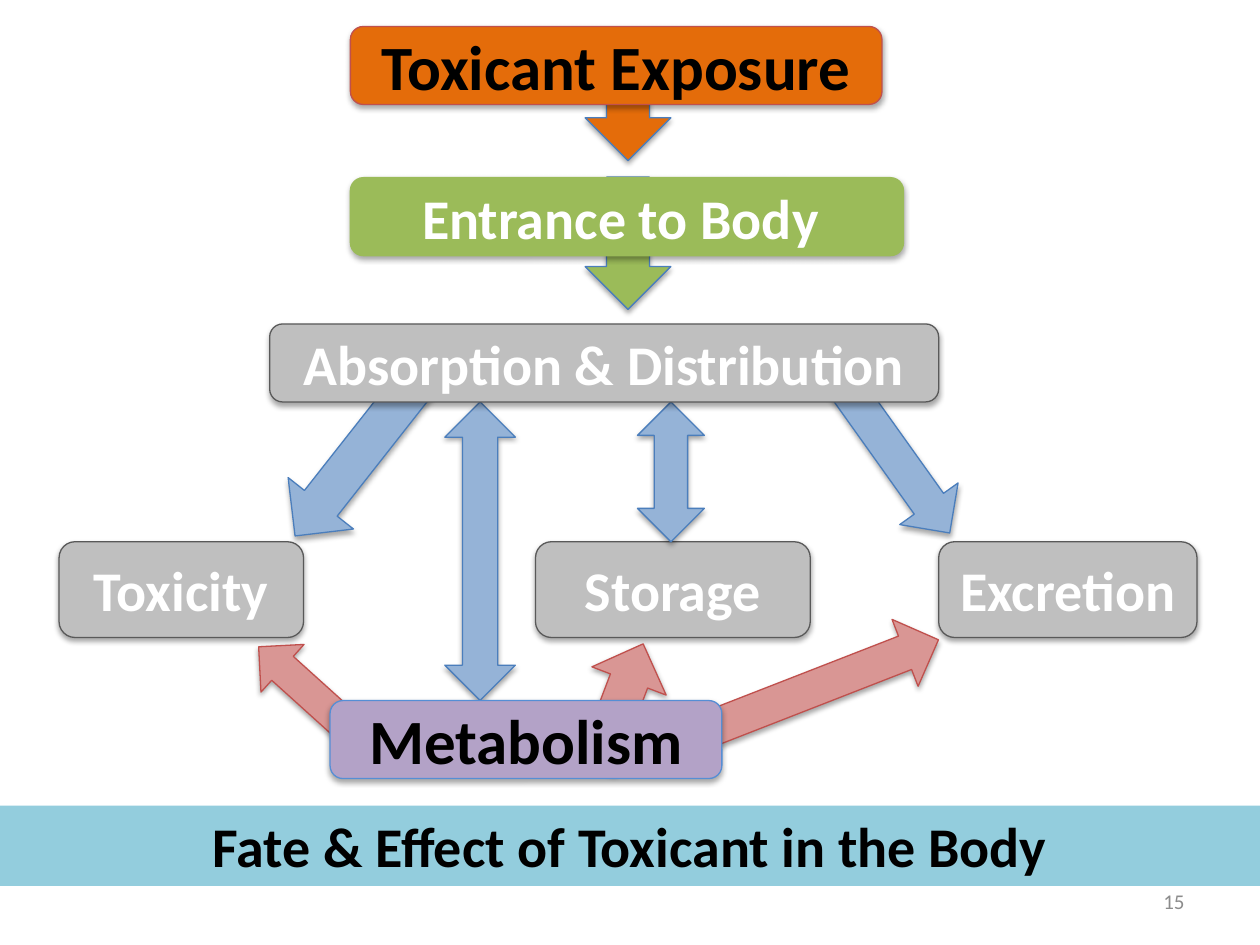
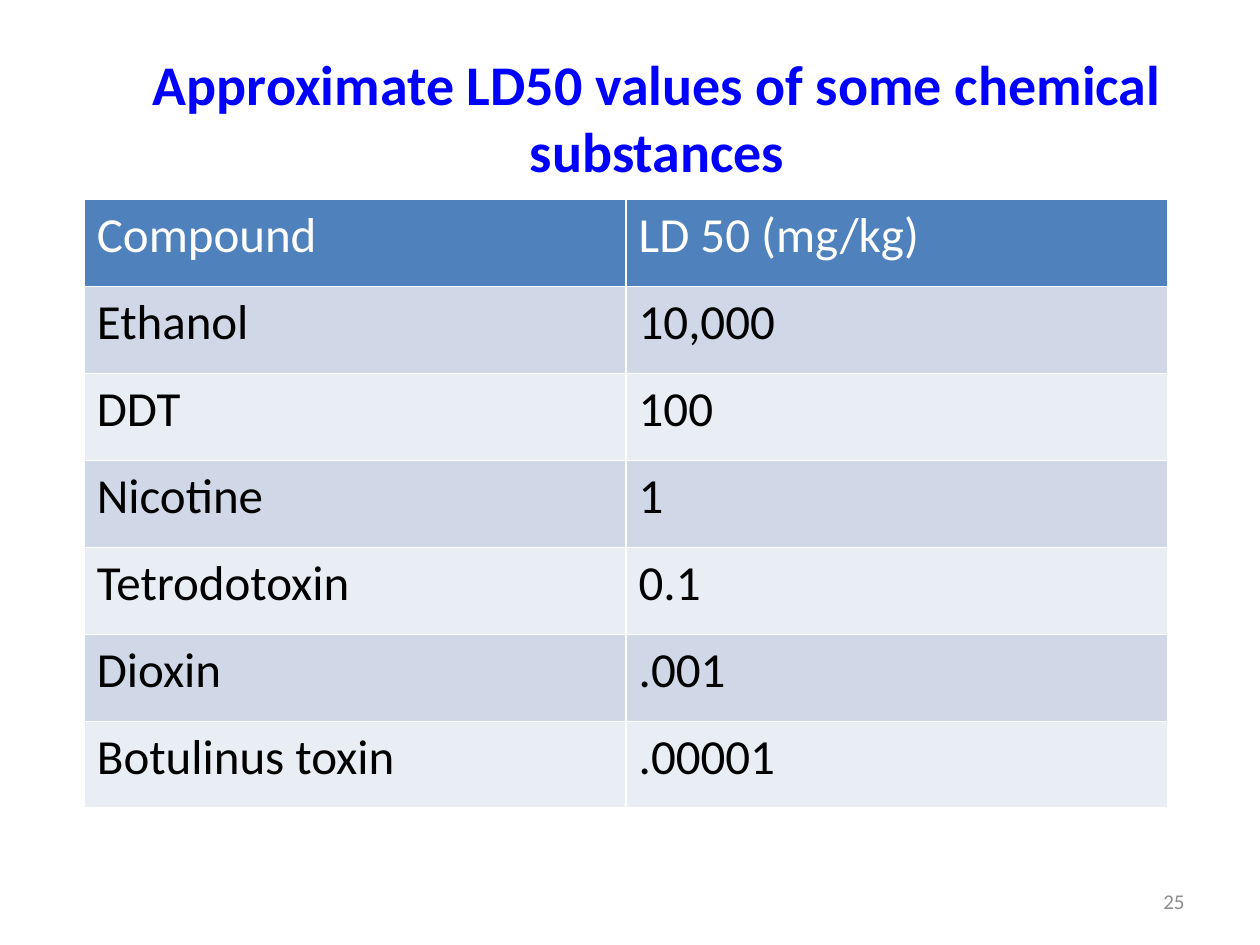
from lxml.etree import SubElement
from pptx import Presentation
from pptx.dml.color import RGBColor
from pptx.enum.shapes import MSO_SHAPE
from pptx.enum.text import MSO_ANCHOR, PP_ALIGN
from pptx.oxml.ns import qn
from pptx.util import Pt

FONT = "Calibri"
BLACK, WHITE, GREY, DARK_GREY = "000000", "FFFFFF", "BFBFBF", "595959"
ORANGE, GREEN, BLUE, BLUE_LINE = "E46C0A", "9BBB59", "95B3D7", "4B7EBC"
PINK, RED, PURPLE, PURPLE_LINE = "D99694", "C0504D", "B3A2C7", "558ED5"
AQUA, TITLE_BLUE, NUMBER_GREY = "93CDDD", "0000FF", "8C8C8C"
HEADER, BANDS = "4F81BD", ("D0D8E8", "E9EDF4")

OUTCOME_TOP, OUTCOME_H, STEP_H = 309.6, 54.7, 44.6
STEP_BOTTOM = 229.7
ARROW_X = 358.85

OUTCOMES = [("Excretion", 536.4, 147.6), ("Storage", 306, 157), ("Toxicity", 33.8, 139.7)]
STEPS = [
    ("Absorption & Distribution", 154.1, 185.1, 382.3, GREY, DARK_GREY, WHITE, 32),
    ("Entrance to Body ", 200.2, 101.5, 316.1, GREEN, GREEN, WHITE, 32),
    ("Toxicant Exposure", 200.2, 15.1, 303.8, ORANGE, RED, BLACK, 36),
]
METABOLISM = ("Metabolism", 188.6, 400.3, 223.9, PURPLE, PURPLE_LINE, BLACK, 36)
DOWN_ARROWS = [(139, 75.6, GREEN), (58.3, 67, ORANGE)]
SPREAD_ARROWS = [(145.4, 234.7, 121.7, 47.5, 128.2), (438.5, 230.4, 131.8, 41, 54.5)]
EXCHANGE_ARROWS = [(364.3, 38.2, 79.9), (254.2, 40.3, 170.6)]
METABOLISM_ARROWS = [
    (137.5, 378, 79.9, 36.7, 222.1),
    (316.8, 380.2, 74.9, 45.4, 290.8),
    (392.4, 372.2, 149, 41, 338.7),
]
BAND_TEXT = "Fate & Effect of Toxicant in the Body"
LD50_TITLE = "Approximate LD50 values of some chemical substances"
LD50_ROWS = [
    ("Compound", "LD 50 (mg/kg)"),
    ("Ethanol", "10,000"),
    ("DDT", "100"),
    ("Nicotine", "1"),
    ("Tetrodotoxin", "0.1"),
    ("Dioxin", ".001"),
    ("Botulinus toxin", ".00001"),
]


def rgb(value):
    return RGBColor.from_string(value)


def write(tf, text, size=32, color=BLACK, bold=False, align=PP_ALIGN.CENTER, anchor=MSO_ANCHOR.MIDDLE):
    tf.word_wrap = True
    tf.vertical_anchor = anchor
    p = tf.paragraphs[0]
    p.alignment = align
    r = p.add_run()
    r.text = text
    r.font.name, r.font.size, r.font.bold = FONT, Pt(size), bold
    r.font.color.rgb = rgb(color)


def place(sp, x, y, w, h):
    sp.left, sp.top, sp.width, sp.height = Pt(x), Pt(y), Pt(w), Pt(h)


def add_shadow(sp):
    effects = sp._element.spPr.find(qn("a:effectLst"))
    shadow = SubElement(effects, qn("a:outerShdw"), blurRad=str(Pt(3.1)), dist=str(Pt(1.8)),
                        dir="5400000", rotWithShape="0")
    color = SubElement(shadow, qn("a:srgbClr"), val=BLACK)
    SubElement(color, qn("a:alpha"), val="35000")


def add_block(s, kind, x, y, w, h, fill, line=None, rot=0):
    sp = s.shapes.add_shape(kind, Pt(x), Pt(y), Pt(w), Pt(h))
    sp.rotation = rot
    sp.fill.solid()
    sp.fill.fore_color.rgb = rgb(fill)
    sp.shadow.inherit = False
    if line:
        sp.line.color.rgb = rgb(line)
        sp.line.width = Pt(0.75)
        add_shadow(sp)
    else:
        sp.line.fill.background()
    return sp


def add_box(s, text, x, y, w, fill, line, color, size, h=STEP_H):
    sp = add_block(s, MSO_SHAPE.ROUNDED_RECTANGLE, x, y, w, h, fill, line)
    write(sp.text_frame, text, size=size, color=color, bold=True)


def add_number(s, number):
    tb = s.shapes.add_textbox(Pt(516), Pt(500.5), Pt(168), Pt(28.75))
    write(tb.text_frame, number, size=12, color=NUMBER_GREY, align=PP_ALIGN.RIGHT)


def style_cell(cell, fill):
    tc_pr = cell._tc.get_or_add_tcPr()
    for side in ("lnL", "lnR", "lnT", "lnB"):
        ln = SubElement(tc_pr, qn(f"a:{side}"), w=str(Pt(1)))
        SubElement(SubElement(ln, qn("a:solidFill")), qn("a:srgbClr"), val=WHITE)
    cell.fill.solid()
    cell.fill.fore_color.rgb = rgb(fill)


def build_fate(prs):
    s = prs.slides.add_slide(prs.slide_layouts[6])
    add_number(s, "15")
    for text, x, w in OUTCOMES:
        add_box(s, text, x, OUTCOME_TOP, w, GREY, DARK_GREY, WHITE, 32, h=OUTCOME_H)
    for mid, length, fill in DOWN_ARROWS:
        add_block(s, MSO_SHAPE.RIGHT_ARROW, ARROW_X - length / 2, mid - 24.5, length, 49,
                  fill, BLUE_LINE, 90)
    for x, y, w, h, rot in SPREAD_ARROWS:
        add_block(s, MSO_SHAPE.RIGHT_ARROW, x, y, w, h, BLUE, BLUE_LINE, rot)
    for x, w, h in EXCHANGE_ARROWS:
        add_block(s, MSO_SHAPE.UP_DOWN_ARROW, x, STEP_BOTTOM, w, h, BLUE, BLUE_LINE)
    for step in STEPS:
        add_box(s, *step)
    band = add_block(s, MSO_SHAPE.RECTANGLE, 0, 460.3, 720, 46, AQUA)
    write(band.text_frame, BAND_TEXT, bold=True, anchor=MSO_ANCHOR.TOP)
    for x, y, w, h, rot in METABOLISM_ARROWS:
        add_block(s, MSO_SHAPE.RIGHT_ARROW, x, y, w, h, PINK, RED, rot)
    add_box(s, *METABOLISM)


def build_ld50(prs):
    s = prs.slides.add_slide(prs.slide_layouts[5])
    title = s.shapes.title
    place(title, 48, 21.6, 655.2, 90)
    write(title.text_frame, LD50_TITLE, color=TITLE_BLUE, bold=True)
    frame = s.shapes.add_table(len(LD50_ROWS), 2, Pt(48.2), Pt(114), Pt(619.2), Pt(347.9))
    table = frame.table
    for i, row in enumerate(LD50_ROWS):
        for j, text in enumerate(row):
            cell = table.cell(i, j)
            style_cell(cell, BANDS[(i - 1) % 2] if i else HEADER)
            write(cell.text_frame, text, size=28, color=BLACK if i else WHITE,
                  align=PP_ALIGN.LEFT, anchor=MSO_ANCHOR.TOP)
    add_number(s, "25")


def main():
    prs = Presentation()
    prs.slide_width, prs.slide_height = Pt(720), Pt(540)
    build_fate(prs)
    build_ld50(prs)
    prs.save("out.pptx")


if __name__ == "__main__":
    main()
